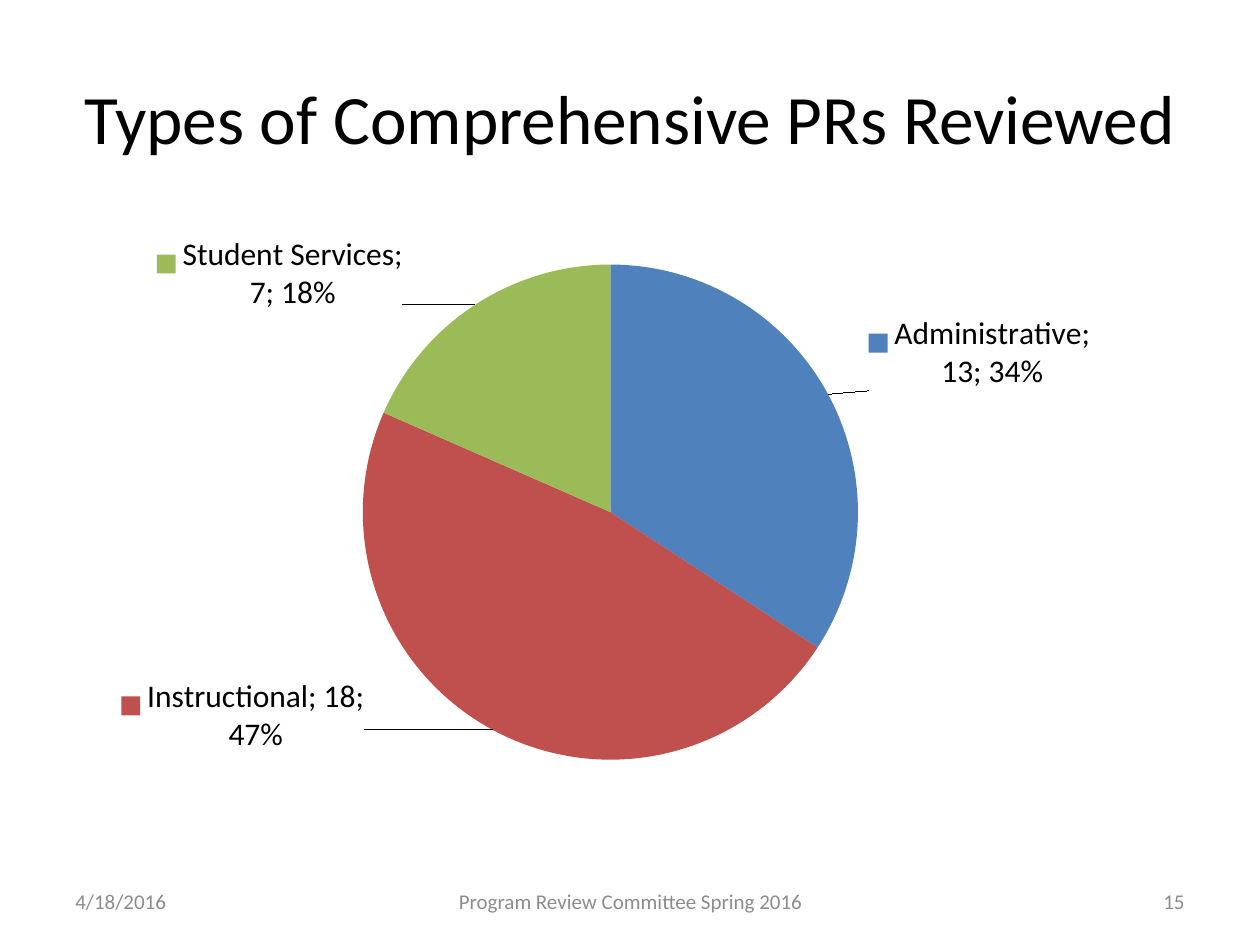
"""Build the slide showing the types of comprehensive program reviews."""
import pptx
import pptx.chart.data
import pptx.dml.color
import pptx.enum.chart
import pptx.enum.text
import pptx.oxml
import pptx.oxml.ns
import pptx.util
from pptx.util import Inches

COLORS = {
    "text": "000000",
    "footer": "8C8C8C",
    "Administrative": "4F81BD",
    "Instructional": "C0504D",
    "Student Services": "9BBB59",
}
ALIGN = pptx.enum.text.PP_ALIGN
OUTSIDE_END = pptx.enum.chart.XL_LABEL_POSITION.OUTSIDE_END


def add_text(slide, text, box, size, color, align):
    textbox = slide.shapes.add_textbox(*[Inches(length) for length in box])
    frame = textbox.text_frame
    frame.word_wrap = True
    frame.vertical_anchor = pptx.enum.text.MSO_ANCHOR.MIDDLE
    paragraph = frame.paragraphs[0]
    paragraph.text = text
    paragraph.alignment = align
    paragraph.font.name = "Calibri"
    paragraph.font.size = pptx.util.Pt(size)
    paragraph.font.color.rgb = pptx.dml.color.RGBColor.from_string(COLORS[color])


def chart_xml(tag, content):
    return pptx.oxml.parse_xml(
        f'<c:{tag} {pptx.oxml.ns.nsdecls("c")}>{content}</c:{tag}>'
    )


presentation = pptx.Presentation()
presentation.slide_width = Inches(10)
presentation.slide_height = Inches(7.5)
slide = presentation.slides.add_slide(presentation.slide_layouts[6])

add_text(slide, "Types of Comprehensive PRs Reviewed", (0.5, 0.3, 9, 1.25),
         39.6, "text", ALIGN.CENTER)

review_counts = {"Administrative": 13, "Instructional": 18, "Student Services": 7}
label_offsets = [(0.03, 0), (-0.11, -0.09), (-0.06, 0.02)]

review_data = pptx.chart.data.CategoryChartData()
review_data.categories = list(review_counts)
review_data.add_series("Series 1", list(review_counts.values()))
reviews = slide.shapes.add_chart(
    pptx.enum.chart.XL_CHART_TYPE.PIE,
    Inches(0.5), Inches(1.5), Inches(9), Inches(5.2), review_data,
).chart
reviews.has_title = False
reviews.has_legend = False
reviews.font.name = "Calibri"
reviews.font.size = pptx.util.Pt(18)
reviews.font.color.rgb = pptx.dml.color.RGBColor.from_string(COLORS["text"])

pie = reviews.plots[0]
pie.vary_by_categories = True
slices = pie.series[0]
labels = slices.data_labels
labels.position = OUTSIDE_END
labels.show_legend_key = True
labels.show_category_name = True
labels.show_value = True
labels.show_percentage = True

for index, (category, (x, y)) in enumerate(zip(review_counts, label_offsets)):
    point = slices.points[index]
    point.format.fill.solid()
    point.format.fill.fore_color.rgb = pptx.dml.color.RGBColor.from_string(COLORS[category])
    point.data_label.position = OUTSIDE_END
    label = slices._element.xpath(f"c:dLbls/c:dLbl[c:idx/@val='{index}']")[0]
    for flag in label.xpath("c:showLegendKey | c:showVal | c:showCatName | c:showPercent"):
        flag.set("val", "1")
    label.xpath("c:idx")[0].addnext(chart_xml(
        "layout", f'<c:manualLayout><c:x val="{x}"/><c:y val="{y}"/></c:manualLayout>'))

for last_flag in slices._element.xpath(".//c:showBubbleSize"):
    last_flag.addnext(chart_xml("separator", "; "))

plot_area = reviews._chartSpace.xpath("c:chart/c:plotArea")[0]
for layout in plot_area.xpath("c:layout"):
    plot_area.remove(layout)
plot_area.insert(0, chart_xml(
    "layout",
    '<c:manualLayout><c:layoutTarget val="inner"/>'
    '<c:xMode val="edge"/><c:yMode val="edge"/>'
    f'<c:x val="{2.38 / 9:.4f}"/><c:y val="{0.6 / 5.2:.4f}"/>'
    f'<c:w val="{3.93 / 9:.4f}"/><c:h val="{3.93 / 5.2:.4f}"/></c:manualLayout>'))

footers = [
    ("4/18/2016", 0.5, 2.33, ALIGN.LEFT),
    ("Program Review Committee Spring 2016", 3.42, 3.17, ALIGN.CENTER),
    ("15", 7.17, 2.33, ALIGN.RIGHT),
]
for text, left, width, align in footers:
    add_text(slide, text, (left, 6.95, width, 0.4), 12, "footer", align)

presentation.save("out.pptx")
